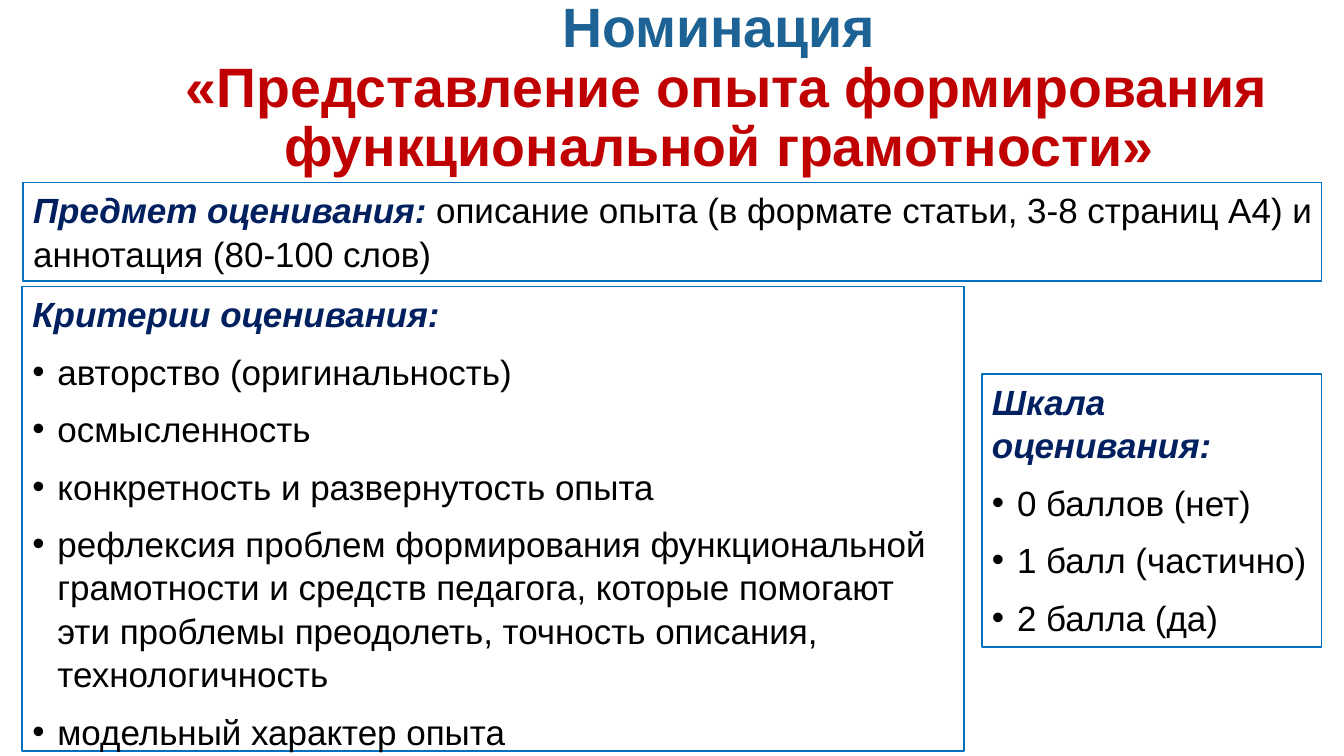
from lxml.etree import SubElement
from pptx import Presentation
from pptx.dml.color import RGBColor
from pptx.enum.shapes import MSO_SHAPE
from pptx.enum.text import MSO_ANCHOR, MSO_AUTO_SIZE, PP_ALIGN
from pptx.oxml.ns import qn
from pptx.util import Inches, Pt

FONT = "Arial"
WHITE, BLACK, NAVY, BORDER = "FFFFFF", "000000", "002060", "0070C0"
TITLE_RUNS = [
    ("Номинация\v ", "1D6294"),
    ("«Представление опыта формирования функциональной грамотности»", "C00000"),
]
SUBJECT = (
    "Предмет оценивания: ",
    "описание опыта (в формате статьи, 3-8 страниц А4) и аннотация (80-100 слов)",
)
SCALE = ("Шкала оценивания:", ["0 баллов (нет)", "1 балл (частично)", "2 балла (да)"])
CRITERIA = (
    "Критерии оценивания:",
    [
        "авторство (оригинальность)",
        "осмысленность",
        "конкретность и развернутость опыта",
        "рефлексия проблем формирования функциональной грамотности и средств "
        "педагога, которые помогают эти проблемы преодолеть, точность описания, "
        "технологичность",
        "модельный характер опыта",
    ],
)

# left, top, width, height in inches
TITLE_AREA = (1.37, -0.07, 11.52, 1.91)
SUBJECT_AREA = (0.23, 1.81, 12.88, 0.98)
SCALE_AREA = (9.74, 3.71, 3.37, 2.71)
CRITERIA_AREA = (0.22, 2.84, 9.34, 4.61)
INDENT = Inches(0.25)


def color(hex_value):
    return RGBColor.from_string(hex_value)


def place(shape, area):
    shape.left, shape.top, shape.width, shape.height = map(Inches, area)


def add_run(paragraph, text, hex_value):
    run = paragraph.add_run()
    run.text = text
    run.font.color.rgb = color(hex_value)
    return run


def add_heading(paragraph, text):
    run = add_run(paragraph, text, NAVY)
    run.font.bold = run.font.italic = True


def format_paragraph(paragraph, bulleted=False, first=False):
    properties = paragraph._p.get_or_add_pPr()
    properties.set("marL", str(INDENT if bulleted else 0))
    properties.set("indent", str(-INDENT if bulleted else 0))
    if bulleted:
        SubElement(properties, qn("a:buFont"), typeface=FONT)
        SubElement(properties, qn("a:buChar"), char="•")
    else:
        SubElement(properties, qn("a:buNone"))
    paragraph.alignment = PP_ALIGN.LEFT
    paragraph.line_spacing = Pt(31)
    paragraph.space_before = Pt(0 if first else 10)
    paragraph.font.name = FONT
    paragraph.font.size = Pt(25)


def format_panel(shape):
    shape.fill.solid()
    shape.fill.fore_color.rgb = color(WHITE)
    shape.line.color.rgb = color(BORDER)
    shape.line.width = Pt(1)
    frame = shape.text_frame
    frame.word_wrap = True
    frame.auto_size = MSO_AUTO_SIZE.NONE
    frame.vertical_anchor = MSO_ANCHOR.TOP


def add_panel(slide, area):
    shape = slide.shapes.add_shape(MSO_SHAPE.RECTANGLE, *map(Inches, area))
    shape.shadow.inherit = False
    format_panel(shape)
    return shape


def fill_list(frame, heading, items):
    paragraph = frame.paragraphs[0]
    format_paragraph(paragraph, first=True)
    add_heading(paragraph, heading)
    for item in items:
        paragraph = frame.add_paragraph()
        format_paragraph(paragraph, bulleted=True)
        add_run(paragraph, item, BLACK)


def fill_title(title):
    place(title, TITLE_AREA)
    frame = title.text_frame
    frame.word_wrap = True
    frame.auto_size = MSO_AUTO_SIZE.NONE
    frame.vertical_anchor = MSO_ANCHOR.MIDDLE
    paragraph = frame.paragraphs[0]
    paragraph.alignment = PP_ALIGN.CENTER
    paragraph.line_spacing = 0.9
    paragraph.font.name = FONT
    paragraph.font.size = Pt(39.6)
    paragraph.font.bold = True
    first_line, rest = TITLE_RUNS[0][0].split("\v")
    add_run(paragraph, first_line, TITLE_RUNS[0][1])
    paragraph.add_line_break()
    add_run(paragraph, rest + TITLE_RUNS[1][0], TITLE_RUNS[1][1])


def main():
    presentation = Presentation()
    presentation.slide_width = Inches(13.33)
    presentation.slide_height = Inches(7.5)
    slide = presentation.slides.add_slide(presentation.slide_layouts[1])
    fill_title(slide.shapes.title)

    subject = add_panel(slide, SUBJECT_AREA).text_frame.paragraphs[0]
    format_paragraph(subject, first=True)
    add_heading(subject, SUBJECT[0])
    add_run(subject, SUBJECT[1], BLACK)

    fill_list(add_panel(slide, SCALE_AREA).text_frame, *SCALE)

    criteria = slide.placeholders[1]
    place(criteria, CRITERIA_AREA)
    format_panel(criteria)
    fill_list(criteria.text_frame, *CRITERIA)
    presentation.save("out.pptx")


if __name__ == "__main__":
    main()
